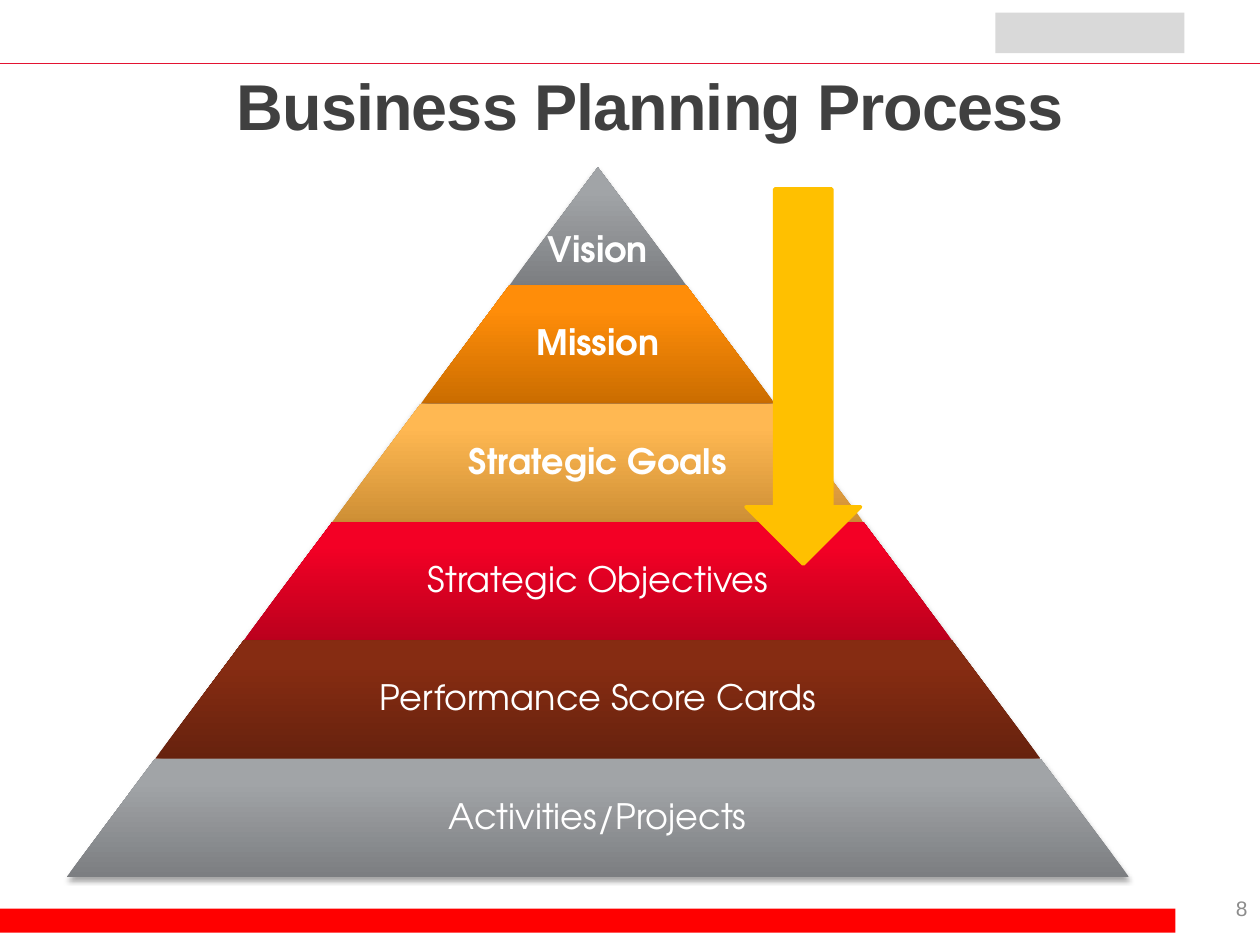
from dataclasses import dataclass

from lxml.etree import SubElement
from pptx import Presentation
from pptx.dml.color import RGBColor
from pptx.enum.shapes import MSO_CONNECTOR, MSO_SHAPE
from pptx.enum.text import MSO_ANCHOR, PP_ALIGN
from pptx.oxml.ns import qn
from pptx.util import Inches, Pt

WHITE = RGBColor(0xFF, 0xFF, 0xFF)
RED = RGBColor(0xFF, 0x00, 0x00)
CRIMSON = RGBColor(0xE3, 0x13, 0x32)
AMBER = RGBColor(0xFF, 0xC0, 0x00)
CHARCOAL = RGBColor(0x40, 0x40, 0x40)
GREY = RGBColor(0x8C, 0x8C, 0x8C)
PALE_GREY = RGBColor(0xD9, 0xD9, 0xD9)
STEEL = (RGBColor(0x7C, 0x7E, 0x81), RGBColor(0xA1, 0xA4, 0xA7))
ORANGE = (RGBColor(0xCB, 0x6D, 0x00), RGBColor(0xFF, 0x8D, 0x09))
SAND = (RGBColor(0xCE, 0x8F, 0x35), RGBColor(0xFF, 0xB8, 0x52))
SCARLET = (RGBColor(0xBB, 0x00, 0x1D), RGBColor(0xF3, 0x00, 0x25))
BROWN = (RGBColor(0x67, 0x22, 0x0E), RGBColor(0x86, 0x2C, 0x12))

BODY_FONT = "Arial"
PYRAMID_FONT = "TeX Gyre Adventor"
LEVELS = [
    ("Vision", STEEL, True),
    ("Mission", ORANGE, True),
    ("Strategic Goals", SAND, True),
    ("Strategic Objectives", SCARLET, False),
    ("Performance Score Cards", BROWN, False),
    ("Activities/Projects", STEEL, False),
]


@dataclass
class Box:
    """A rectangle in inches."""

    left: float
    top: float
    width: float
    height: float

    def inner(self, left, top, width, height):
        """Return an inner box given as shares of this one."""
        return Box(self.left + left * self.width, self.top + top * self.height,
                   width * self.width, height * self.height)

    def lengths(self):
        """Return left, top, width and height as slide lengths."""
        return [Inches(value) for value in (self.left, self.top, self.width, self.height)]


def add_flat_shape(slide, kind, box, color):
    """Add a preset shape in one colour without line or shadow."""
    shape = slide.shapes.add_shape(kind, *box.lengths())
    shape.fill.solid()
    shape.fill.fore_color.rgb = color
    shape.line.fill.background()
    shape.shadow.inherit = False
    return shape


def add_label(slide, box, text, size, color, font=BODY_FONT, bold=False,
              align=PP_ALIGN.CENTER, anchor=MSO_ANCHOR.MIDDLE):
    """Add a one-line text box and return its shape."""
    label = slide.shapes.add_textbox(*box.lengths())
    frame = label.text_frame
    frame.word_wrap = True
    frame.vertical_anchor = anchor
    frame.text = text
    paragraph = frame.paragraphs[0]
    paragraph.alignment = align
    run_font = paragraph.runs[0].font
    run_font.name = font
    run_font.size = Pt(size)
    run_font.bold = bold
    run_font.color.rgb = color
    return label


def add_soft_shadow(shape):
    """Give the shape a faint shadow that falls downwards."""
    shape.shadow.inherit = False
    effects = shape._element.spPr.find(qn("a:effectLst"))
    shadow = SubElement(effects, qn("a:outerShdw"), blurRad=str(Pt(3.1)),
                        dist=str(Pt(1.8)), dir="5400000", rotWithShape="0")
    color = SubElement(shadow, qn("a:srgbClr"), val="000000")
    SubElement(color, qn("a:alpha"), val="35000")


def add_header(slide, box):
    """Place the brand block and the rule below it."""
    add_flat_shape(slide, MSO_SHAPE.RECTANGLE, box.inner(0.79, 0.2, 0.15, 0.64), PALE_GREY)
    bottom = Inches(box.top + box.height)
    rule = slide.shapes.add_connector(MSO_CONNECTOR.STRAIGHT, Inches(box.left), bottom,
                                      Inches(box.left + box.width), bottom)
    rule.line.color.rgb = CRIMSON
    rule.line.width = Pt(0.75)
    SubElement(rule._element.spPr, qn("a:effectLst"))


def add_footer(slide, box):
    """Place the red bar and the slide number."""
    add_flat_shape(slide, MSO_SHAPE.RECTANGLE, box.inner(0, 0.5, 0.933, 0.38), RED)
    add_label(slide, box.inner(0.79, 0, 0.21, 1), "8", 12, GREY, align=PP_ALIGN.RIGHT)


def add_title(slide, box):
    """Place the slide title."""
    title = add_label(slide, box, "Business Planning Process", 37, CHARCOAL, bold=True,
                      anchor=MSO_ANCHOR.TOP)
    title.text_frame.paragraphs[0].runs[0]._r.get_or_add_rPr().set("spc", "-50")


def add_band(slide, box, colors):
    """Draw one shaded trapezoid with a soft shadow."""
    band = slide.shapes.add_shape(MSO_SHAPE.TRAPEZOID, *box.lengths())
    band.fill.gradient()
    band.fill.gradient_angle = 90
    for stop, color, position in zip(band.fill.gradient_stops, colors, (0, 0.8)):
        stop.color.rgb = color
        stop.position = position
    band.line.fill.background()
    add_soft_shadow(band)
    return band


def add_pyramid(slide, box):
    """Stack the planning levels as bands that widen by equal steps."""
    count = len(LEVELS)
    slope = box.width / 2 / box.height
    for index, (name, colors, bold) in enumerate(LEVELS):
        width = (index + 1) / count
        band_box = box.inner((1 - width) / 2, index / count, width, 1 / count)
        add_band(slide, band_box, colors).adjustments[0] = slope
        is_apex = index == 0
        label_box = band_box if is_apex else band_box.inner(0.175, 0, 0.65, 1)
        frame = add_label(slide, label_box, name, 20, WHITE, PYRAMID_FONT, bold).text_frame
        frame.margin_left = frame.margin_right = frame.margin_bottom = Inches(0.03)
        frame.margin_top = Inches(0.43 if is_apex else 0.03)
        frame.paragraphs[0].line_spacing = 0.9


def add_direction_arrow(slide, box):
    """Draw the arrow that leads down the levels."""
    arrow = add_flat_shape(slide, MSO_SHAPE.DOWN_ARROW, box, AMBER)
    arrow.line.color.rgb = AMBER
    arrow.line.width = Pt(2)


def main():
    """Build the slide and save it."""
    presentation = Presentation()
    presentation.slide_width = Inches(10)
    presentation.slide_height = Inches(7.5)
    slide = presentation.slides.add_slide(presentation.slide_layouts[6])
    page = Box(0, 0, 10, 7.5)
    add_header(slide, page.inner(0, 0, 1, 0.067))
    add_footer(slide, page.inner(0, 0.928, 1, 0.067))
    add_pyramid(slide, page.inner(0.053, 0.177, 0.843, 0.751))
    add_direction_arrow(slide, page.inner(0.592, 0.2, 0.091, 0.397))
    add_title(slide, page.inner(0.032, 0.063, 0.968, 0.096))
    presentation.save("out.pptx")


if __name__ == "__main__":
    main()
